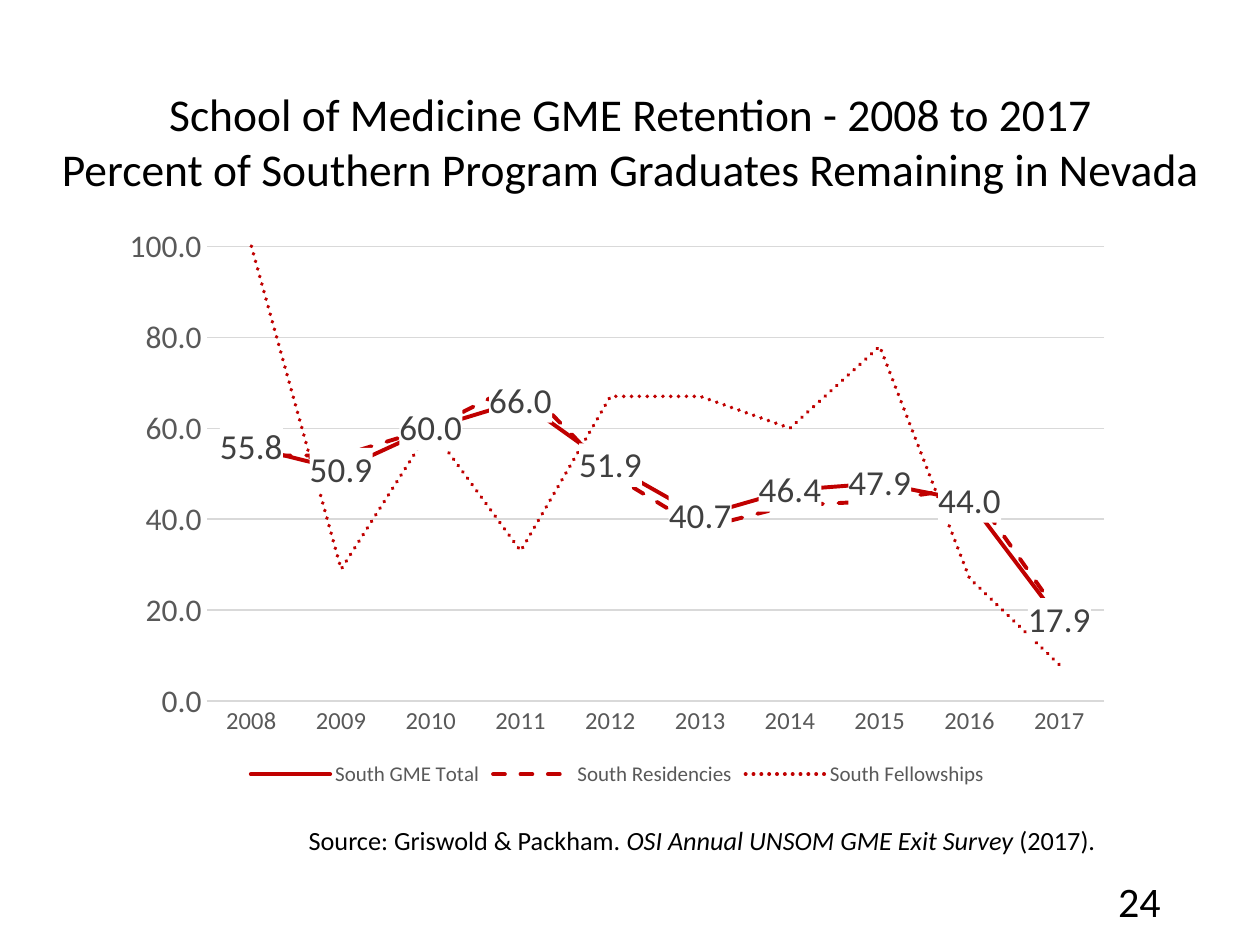
"""Builds the slide on retention of southern programme graduates, 2008 to 2017."""
from lxml.etree import SubElement
from pptx import Presentation
from pptx.chart.data import CategoryChartData
from pptx.dml.color import RGBColor
from pptx.enum.chart import XL_CHART_TYPE, XL_LABEL_POSITION, XL_LEGEND_POSITION, XL_TICK_MARK
from pptx.enum.dml import MSO_LINE
from pptx.enum.text import MSO_ANCHOR, PP_ALIGN
from pptx.oxml import parse_xml
from pptx.oxml.ns import nsdecls, qn
from pptx.util import Cm, Pt

BLACK = RGBColor(0x00, 0x00, 0x00)
RED = RGBColor(0xC0, 0x00, 0x00)
GRID_GREY = RGBColor(0xD9, 0xD9, 0xD9)
AXIS_GREY = RGBColor(0x59, 0x59, 0x59)
LABEL_GREY = RGBColor(0x40, 0x40, 0x40)


def format_font(font, size, color, italic=False):
    values = {"name": "Calibri", "size": Pt(size), "italic": italic, "bold": False}
    for attribute, value in values.items():
        setattr(font, attribute, value)
    font.color.rgb = color


def fill_box(box, place, paragraphs, size, alignment, anchor):
    for attribute, value in zip(("left", "top", "width", "height"), place):
        setattr(box, attribute, Cm(value))
    frame = box.text_frame
    frame.word_wrap = True
    frame.vertical_anchor = anchor
    for index, spans in enumerate(paragraphs):
        paragraph = frame.add_paragraph() if index else frame.paragraphs[0]
        paragraph.alignment = alignment
        paragraph.space_before = Pt(0)
        for text, italic in spans:
            span = paragraph.add_run()
            span.text = text
            format_font(span.font, size, BLACK, italic)


deck = Presentation()
deck.slide_width, deck.slide_height = Cm(25.4), Cm(19.05)
page = deck.slides.add_slide(deck.slide_layouts[5])

title_lines = [
    [("School of Medicine GME Retention - 2008 to 2017", False)],
    [("Percent of Southern Program Graduates Remaining in Nevada", False)],
]
fill_box(page.shapes.title, (0.62, 1.61, 24.2, 2.48), title_lines, 26, PP_ALIGN.CENTER, MSO_ANCHOR.TOP)

chart_data = CategoryChartData(number_format="0.0")
chart_data.categories = [str(year) for year in range(2008, 2018)]
retention = {
    "South GME Total": (55.8, 50.9, 60, 66, 51.9, 40.7, 46.4, 47.9, 44, 17.9),
    "South Residencies": (54, 54, 60, 70, 50, 38, 43, 44, 47, 19),
    "South Fellowships": (100, 29, 60, 33, 67, 67, 60, 78, 27, 8),
}
for name, values in retention.items():
    chart_data.add_series(name, values)
chart = page.shapes.add_chart(
    XL_CHART_TYPE.LINE, Cm(2.22), Cm(4.35), Cm(20.45), Cm(11.61), chart_data
).chart
format_font(chart.font, 10, BLACK)
chart.has_title = False
chart.has_legend = True
chart.legend.position = XL_LEGEND_POSITION.BOTTOM
chart.legend.include_in_layout = False
format_font(chart.legend.font, 12, AXIS_GREY)

plot_area = chart.plots[0]._element.getparent()
for old_layout in plot_area.findall(qn("c:layout")):
    plot_area.remove(old_layout)
layout = parse_xml(f"<c:layout {nsdecls('c')}><c:manualLayout/></c:layout>")
plot_area.insert(0, layout)
layout_values = {
    "layoutTarget": "inner", "xMode": "edge", "yMode": "edge",
    "x": "0.095", "y": "0.053", "w": "0.885", "h": "0.79",
}
for tag, value in layout_values.items():
    SubElement(layout[0], qn(f"c:{tag}")).set("val", value)

for axis, size in ((chart.category_axis, 14), (chart.value_axis, 18)):
    axis.major_tick_mark = axis.minor_tick_mark = XL_TICK_MARK.NONE
    format_font(axis.tick_labels.font, size, AXIS_GREY)
value_axis = chart.value_axis
axis_values = {"minimum_scale": 0, "maximum_scale": 100, "major_unit": 20}
for attribute, value in axis_values.items():
    setattr(value_axis, attribute, value)
value_axis.tick_labels.number_format = "0.0"
value_axis.tick_labels.number_format_is_linked = False
value_axis.format.line.fill.background()
for line in (chart.category_axis.format.line, value_axis.major_gridlines.format.line):
    line.color.rgb = GRID_GREY
    line.width = Pt(0.75)

plot = chart.plots[0]
plot.vary_by_categories = False
dashes = (MSO_LINE.SOLID, MSO_LINE.DASH, MSO_LINE.ROUND_DOT)
for series, dash in zip(plot.series, dashes):
    series.smooth = False
    line = series.format.line
    line.color.rgb = RED
    line.width = Pt(2.25)
    line.dash_style = dash
    series._element.find(f"{qn('c:spPr')}/{qn('a:ln')}").set("cap", "rnd")

labels = plot.series[0].data_labels
label_values = {
    "show_value": True, "position": XL_LABEL_POSITION.CENTER,
    "number_format": "0.0", "number_format_is_linked": False,
}
for attribute, value in label_values.items():
    setattr(labels, attribute, value)
format_font(labels.font, 20, LABEL_GREY)
label_fill = parse_xml(
    f'<c:spPr {nsdecls("c", "a")}><a:solidFill><a:srgbClr val="FFFFFF"/></a:solidFill></c:spPr>'
)
labels._element.find(qn("c:txPr")).addprevious(label_fill)

source_line = [
    ("Source: Griswold & Packham. ", False),
    ("OSI Annual UNSOM GME Exit Survey ", True),
    ("(2017).", False),
]
notes = (
    ((5.64, 16.49, 17.02, 0.9), [source_line], 15, PP_ALIGN.CENTER, MSO_ANCHOR.TOP),
    ((17.93, 17.65, 5.72, 1.02), [[("24", False)]], 24, PP_ALIGN.RIGHT, MSO_ANCHOR.MIDDLE),
)
for place, paragraphs, size, alignment, anchor in notes:
    box = page.shapes.add_textbox(0, 0, 0, 0)
    fill_box(box, place, paragraphs, size, alignment, anchor)

deck.save("out.pptx")
